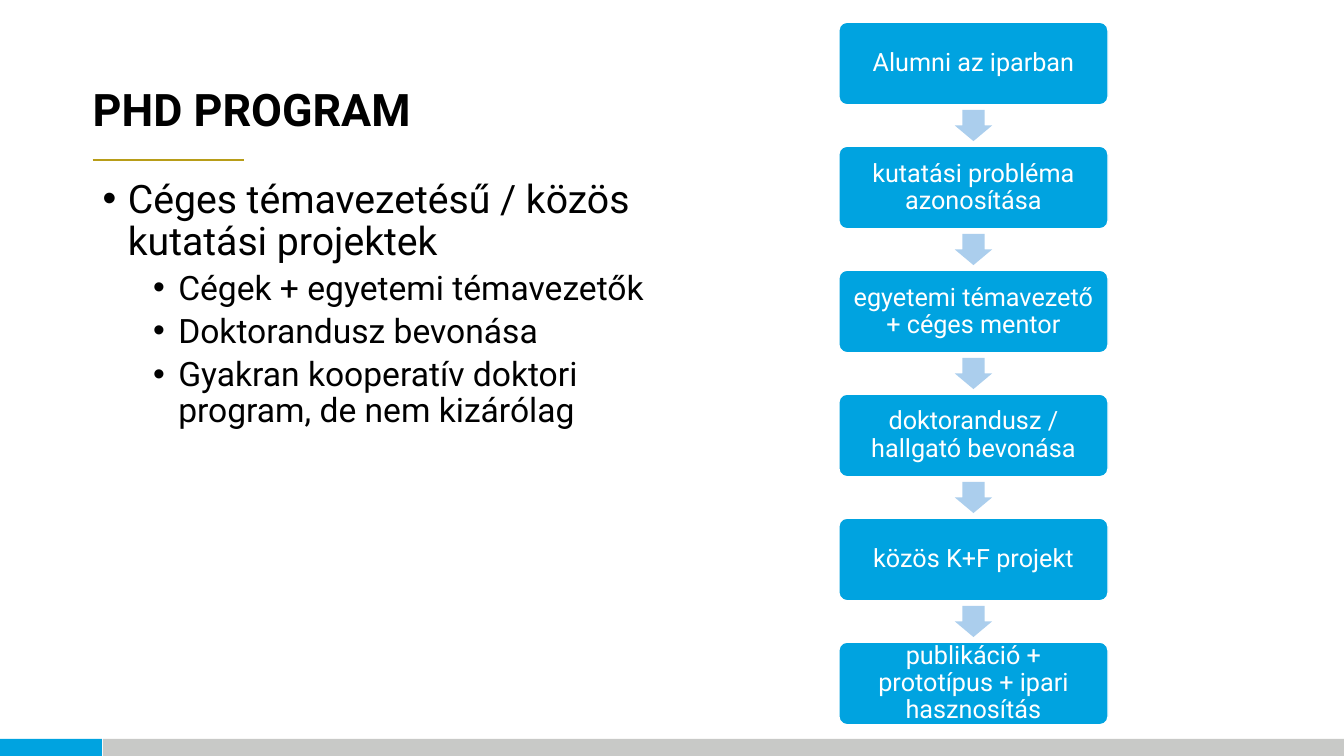
from lxml import etree
from pptx import Presentation
from pptx.dml.color import RGBColor
from pptx.enum.shapes import MSO_CONNECTOR, MSO_SHAPE
from pptx.enum.text import MSO_ANCHOR, PP_ALIGN
from pptx.oxml.ns import qn
from pptx.util import Inches, Pt

RECT = MSO_SHAPE.RECTANGLE
ROUND = MSO_SHAPE.ROUNDED_RECTANGLE
DOWN = MSO_SHAPE.DOWN_ARROW
LINE = MSO_CONNECTOR.STRAIGHT
TOP, MIDDLE, BOTTOM = MSO_ANCHOR.TOP, MSO_ANCHOR.MIDDLE, MSO_ANCHOR.BOTTOM
LEFT, CENTER = PP_ALIGN.LEFT, PP_ALIGN.CENTER

COLORS = {"blue": "00A3E0", "grey": "C8C9C7", "gold": "B89D18",
          "pale": "ABCEED", "white": "FFFFFF", "black": "000000"}

TITLE = "PHD PROGRAM"
POINTS = [
    (0, "Céges témavezetésű / közös kutatási projektek"),
    (1, "Cégek + egyetemi témavezetők"),
    (1, "Doktorandusz bevonása"),
    (1, "Gyakran kooperatív doktori program, de nem kizárólag"),
]
LEVELS = [{"size": 28, "indent": 0.25, "before": 10},
          {"size": 24, "indent": 0.75, "before": 5}]
STEPS = [
    "Alumni az iparban",
    "kutatási probléma azonosítása",
    "egyetemi témavezető + céges mentor",
    "doktorandusz / hallgató bevonása",
    "közös K+F projekt",
    "publikáció + prototípus + ipari hasznosítás",
]
STEP_X, STEP_Y, STEP_W, STEP_H, PITCH = 8.32, 0.22, 2.67, 0.82, 1.23
ARROW_W, ARROW_H = 0.37, 0.31


def color(name):
    return RGBColor.from_string(COLORS[name])


def assign(target, values):
    for name, value in values.items():
        setattr(target, name, value)


class Deck:
    def __init__(self, font):
        self.font = font
        self.prs = Presentation()
        assign(self.prs, {"slide_width": Inches(13.33), "slide_height": Inches(7.5)})
        self.slide = self.prs.slides.add_slide(self.prs.slide_layouts[6])

    def shape(self, kind, box, fill, line=None, adjust=()):
        item = self.slide.shapes.add_shape(kind, *map(Inches, box))
        item.shadow.inherit = False
        item.fill.solid()
        item.fill.fore_color.rgb = color(fill)
        if line:
            item.line.color.rgb = color(line)
            item.line.width = Pt(1)
        else:
            item.line.fill.background()
        for i, value in enumerate(adjust):
            item.adjustments[i] = value
        return item

    def rule(self, x, y, width, ink):
        ends = map(Inches, (x, y, x + width, y))
        item = self.slide.shapes.add_connector(LINE, *ends)
        item.line.color.rgb = color(ink)
        item.line.width = Pt(1.5)
        etree.SubElement(item._element.spPr, qn("a:effectLst"))

    def frame(self, item, anchor, insets):
        sides = ("margin_left", "margin_top", "margin_right", "margin_bottom")
        frame = item.text_frame
        assign(frame, {"word_wrap": True, "vertical_anchor": anchor})
        assign(frame, dict(zip(sides, map(Inches, insets))))
        return frame

    def box(self, box, anchor, insets):
        item = self.slide.shapes.add_textbox(*map(Inches, box))
        return self.frame(item, anchor, insets)

    def label(self, par, text, size, ink, align=LEFT, bold=False):
        par.text = text
        assign(par, {"alignment": align, "line_spacing": 0.9})
        assign(par.font, {"name": self.font, "size": Pt(size), "bold": bold})
        par.font.color.rgb = color(ink)

    def bullets(self, frame, points):
        for i, (level, text) in enumerate(points):
            par = frame.add_paragraph() if i else frame.paragraphs[0]
            style = LEVELS[level]
            par.level = level
            props = par._p.get_or_add_pPr()
            props.set("marL", str(Inches(style["indent"])))
            props.set("indent", str(Inches(-0.25)))
            etree.SubElement(props, qn("a:buFont"), typeface="Arial")
            etree.SubElement(props, qn("a:buChar"), char="•")
            self.label(par, text, style["size"], "black")
            par.space_before = Pt(style["before"] if i else 0)

    def step(self, y, text):
        item = self.shape(ROUND, (STEP_X, y, STEP_W, STEP_H), "blue", "white", [0.1])
        frame = self.frame(item, MIDDLE, [0.07] * 4)
        self.label(frame.paragraphs[0], text, 18, "white", CENTER)

    def arrow(self, y):
        """Fill the gap below a step that ends at y."""
        x = STEP_X + (STEP_W - ARROW_W) / 2
        top = y + (PITCH - STEP_H - ARROW_H) / 2
        self.shape(DOWN, (x, top, ARROW_W, ARROW_H), "pale", adjust=[0.6, 0.5])


def main():
    deck = Deck("Roboto")
    deck.shape(RECT, (-0.01, 7.33, 1.02, 0.18), "blue")
    deck.shape(RECT, (1.02, 7.33, 12.32, 0.18), "grey")
    deck.rule(0.92, 1.59, 1.5, "gold")

    body = deck.box((0.92, 1.73, 5.67, 5.03), TOP, (0.1, 0.05, 0.1, 0.05))
    deck.bullets(body, POINTS)
    title = deck.box((0.92, 0.21, 11.5, 1.19), BOTTOM, (0, 0.05, 0.1, 0.05))
    deck.label(title.paragraphs[0], TITLE, 32, "black", bold=True)

    for i, text in enumerate(STEPS):
        y = STEP_Y + i * PITCH
        deck.step(y, text)
        if i < len(STEPS) - 1:
            deck.arrow(y + STEP_H)

    deck.prs.save("out.pptx")


if __name__ == "__main__":
    main()
